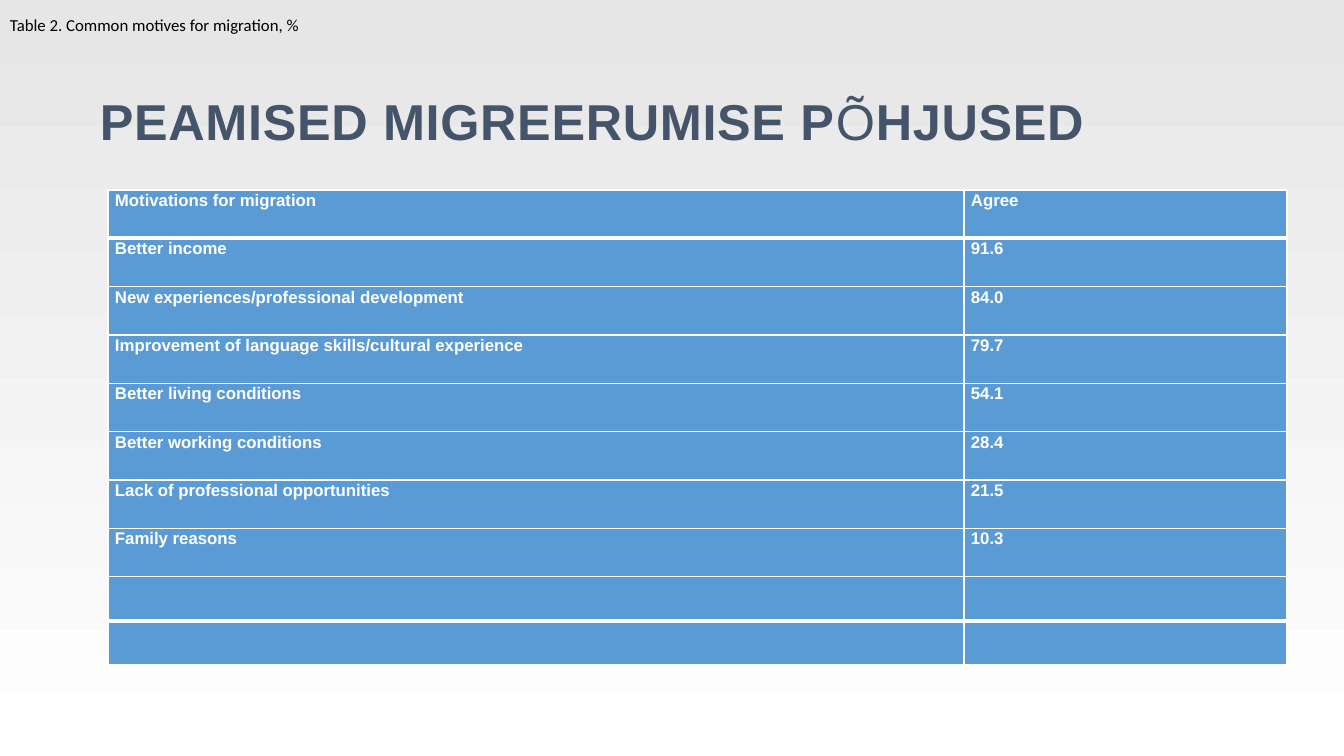
from dataclasses import dataclass

from lxml.etree import SubElement
from pptx import Presentation
from pptx.dml.color import RGBColor
from pptx.enum.text import MSO_ANCHOR, PP_ALIGN
from pptx.oxml.ns import qn
from pptx.util import Emu, Pt


@dataclass(frozen=True)
class Theme:
    top: str = "E6E6E6"
    white: str = "FFFFFF"
    blue: str = "5B9BD5"
    navy: str = "44546A"
    black: str = "000000"
    sans: str = "Arial"
    note: str = "Calibri"
    head: int = 36
    body: int = 12
    thin: int = 1
    thick: int = 3


THEME = Theme()
SCALE = 914400 / 100.8
MOTIVES = [
    ("Motivations for migration", "Agree"),
    ("Better income", "91.6"),
    ("New experiences/professional development", "84.0"),
    ("Improvement of language skills/cultural experience", "79.7"),
    ("Better living conditions", "54.1"),
    ("Better working conditions", "28.4"),
    ("Lack of professional opportunities", "21.5"),
    ("Family reasons", "10.3"),
    ("", ""),
    ("", ""),
]


def px(count):
    return Emu(round(count * SCALE))


def add_run(para, text, face, size, color, bold=False, gap=0):
    run = para.add_run()
    run.text = text
    font = run.font
    font.name, font.size, font.bold = face, Pt(size), bold
    font.color.rgb = RGBColor.from_string(color)
    if gap:
        font._element.set("spc", str(gap))


def add_box(slide, left, top, width, height, anchor):
    box = slide.shapes.add_textbox(px(left), px(top), px(width), px(height))
    frame = box.text_frame
    frame.word_wrap = True
    frame.vertical_anchor = anchor
    return frame.paragraphs[0]


def paint_back(slide):
    fill = slide.background.fill
    fill.gradient()
    fill.gradient_angle = 270
    for stop, color in zip(fill.gradient_stops, (THEME.top, THEME.white)):
        stop.color.rgb = RGBColor.from_string(color)


def add_edge(cell, side, width):
    props = cell._tc.get_or_add_tcPr()
    line = SubElement(props, qn(f"a:ln{side}"), w=str(Pt(width)))
    fill = SubElement(line, qn("a:solidFill"))
    SubElement(fill, qn("a:srgbClr"), val=THEME.white)


def fill_cell(cell, text, above, below):
    for side, width in zip("LRTB", (THEME.thin, THEME.thin, above, below)):
        add_edge(cell, side, width)
    cell.fill.solid()
    cell.fill.fore_color.rgb = RGBColor.from_string(THEME.blue)
    cell.margin_left = cell.margin_right = px(7)
    cell.margin_top = cell.margin_bottom = 0
    if text:
        para = cell.text_frame.paragraphs[0]
        para.alignment = PP_ALIGN.JUSTIFY
        para.line_spacing = 1.07
        add_run(para, text, THEME.sans, THEME.body, THEME.white, True)


def add_grid(slide, rows):
    last = len(rows) - 1
    frame = slide.shapes.add_table(
        len(rows), 2, px(108), px(190), px(1179), px(476))
    table = frame.table
    for col, width in zip(table.columns, (856, 323)):
        col.width = px(width)
    for at, texts in enumerate(rows):
        table.rows[at].height = px(387) // 8 if texts[0] else px(44)
        above = THEME.thick if at in (1, last) else THEME.thin
        below = THEME.thick if at in (0, last - 1) else THEME.thin
        for col, text in enumerate(texts):
            fill_cell(table.cell(at, col), text, above, below)


def add_title(slide):
    para = add_box(slide, 90, 30, 1165, 126, MSO_ANCHOR.BOTTOM)
    para.line_spacing = 0.9
    for text, bold in (
        ("PEAMISED MIGREERUMISE P", True), ("Õ", False), ("HJUSED", True)
    ):
        add_run(para, text, THEME.sans, THEME.head, THEME.navy, bold, 50)


def add_label(slide):
    para = add_box(slide, 0, 10, 420, 30, MSO_ANCHOR.MIDDLE)
    para.alignment = PP_ALIGN.JUSTIFY
    add_run(para, "Table 2. Common motives for migration, %",
            THEME.note, THEME.body, THEME.black)


def main():
    deck = Presentation()
    deck.slide_width, deck.slide_height = px(1344), px(756)
    slide = deck.slides.add_slide(deck.slide_layouts[6])
    paint_back(slide)
    add_grid(slide, MOTIVES)
    add_title(slide)
    add_label(slide)
    deck.save("out.pptx")


if __name__ == "__main__":
    main()
